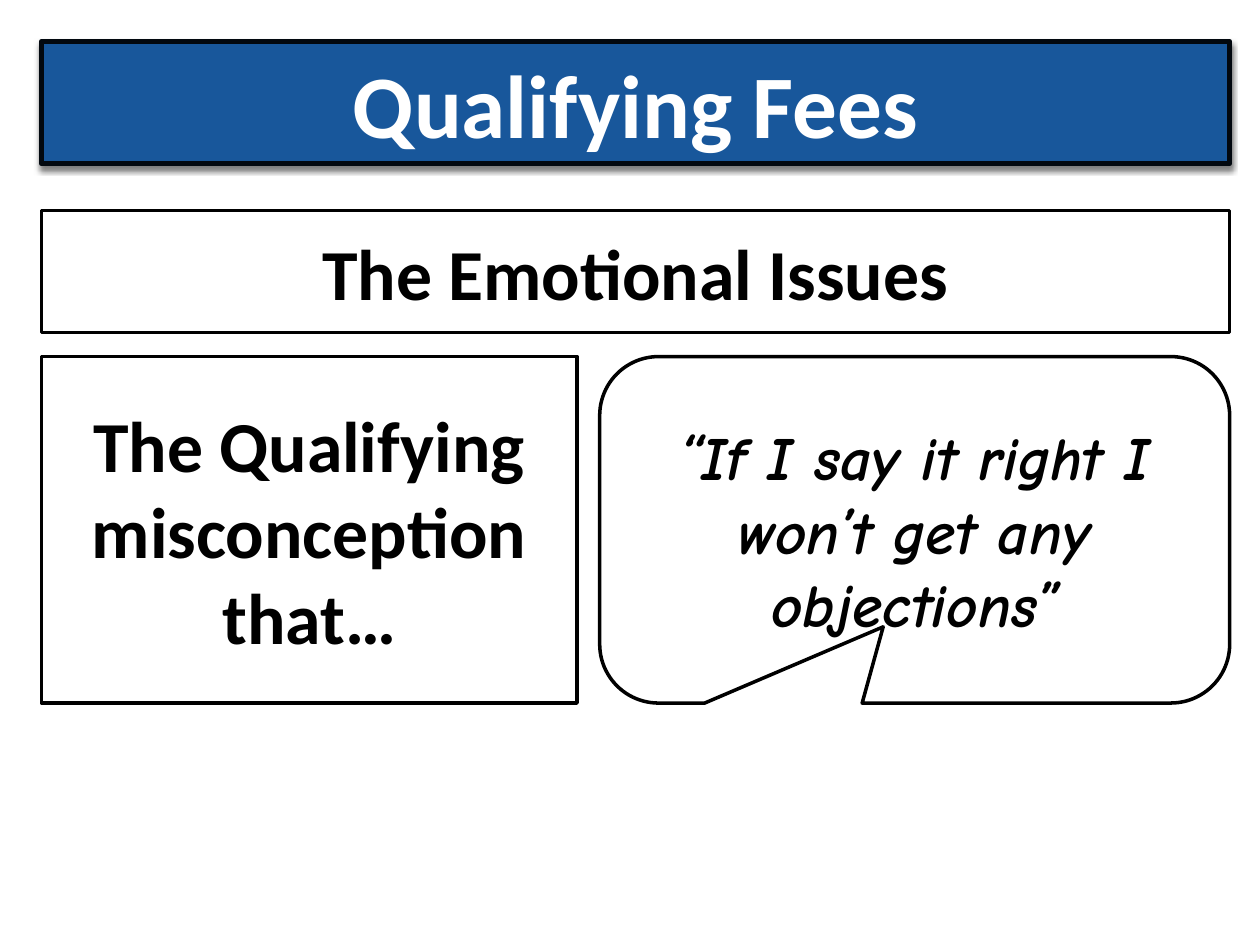
from lxml.etree import SubElement
from pptx import Presentation
from pptx.dml.color import RGBColor
from pptx.enum.shapes import MSO_SHAPE
from pptx.enum.text import MSO_ANCHOR, PP_ALIGN
from pptx.oxml.ns import qn
from pptx.util import Inches, Pt

COLORS = {"blue": "18579B", "navy": "02080F", "white": "FFFFFF", "black": "000000"}
LEFT, FULL_WIDTH, BAR_HEIGHT = 0.33, 9.43, 0.97
ROW_TOP, ROW_HEIGHT = 2.83, 2.75
QUOTE_WIDTH = 5
QUOTE_LEFT = LEFT + FULL_WIDTH - QUOTE_WIDTH


def color(name):
    return RGBColor.from_string(COLORS[name])


def add_panel(kind, box, text, size, font="Calibri", fill="white", line="black",
              line_width=2, ink="black", italic=False):
    panel = slide.shapes.add_shape(kind, *[Inches(length) for length in box])
    panel.shadow.inherit = False
    panel.fill.solid()
    panel.fill.fore_color.rgb = color(fill)
    panel.line.color.rgb = color(line)
    panel.line.width = Pt(line_width)
    frame = panel.text_frame
    frame.word_wrap = True
    frame.vertical_anchor = MSO_ANCHOR.MIDDLE
    frame.text = text
    paragraph = frame.paragraphs[0]
    paragraph.alignment = PP_ALIGN.CENTER
    run_font = paragraph.runs[0].font
    run_font.name = font
    run_font.size = Pt(size)
    run_font.bold = True
    run_font.italic = italic
    run_font.color.rgb = color(ink)
    return panel


prs = Presentation()
prs.slide_width = Inches(10)
prs.slide_height = Inches(7.5)
slide = prs.slides.add_slide(prs.slide_layouts[6])

title = add_panel(MSO_SHAPE.RECTANGLE, (LEFT, 0.33, FULL_WIDTH, BAR_HEIGHT),
                  "Qualifying Fees", 51, fill="blue", line="navy",
                  line_width=3, ink="white")
effects = title.element.spPr.find(qn("a:effectLst"))
shadow = SubElement(effects, qn("a:outerShdw"), blurRad=str(Pt(3)),
                    dist=str(Pt(2)), dir="5400000", rotWithShape="0")
shadow_color = SubElement(shadow, qn("a:srgbClr"), val=COLORS["black"])
SubElement(shadow_color, qn("a:alpha"), val="50000")

add_panel(MSO_SHAPE.RECTANGLE, (LEFT, 1.67, FULL_WIDTH, BAR_HEIGHT),
          "The Emotional Issues", 41)

quote = add_panel(MSO_SHAPE.ROUNDED_RECTANGULAR_CALLOUT,
                  (QUOTE_LEFT, ROW_TOP, QUOTE_WIDTH, ROW_HEIGHT),
                  "“If I say it right I won’t get any objections”", 35,
                  font="Comic Neue", italic=True)
for index, value in enumerate((-0.05, 0.28, 0.17)):
    quote.adjustments[index] = value

add_panel(MSO_SHAPE.RECTANGLE, (LEFT, ROW_TOP, 4.25, ROW_HEIGHT),
          "The Qualifying misconception that…", 41)

prs.save("out.pptx")
